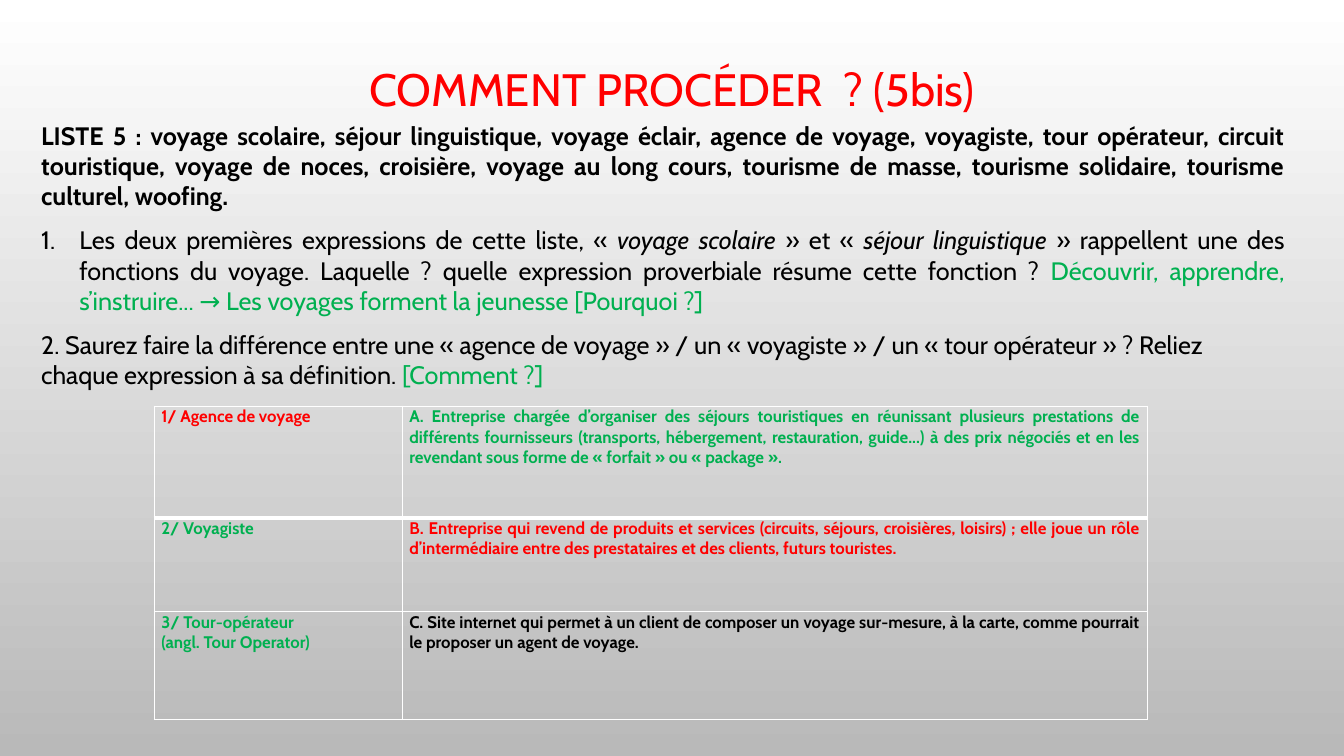
from dataclasses import dataclass

from lxml.etree import SubElement
from pptx import Presentation
from pptx.dml.color import RGBColor
from pptx.enum.text import MSO_ANCHOR as Anchor, MSO_AUTO_SIZE as AutoSize, PP_ALIGN as Align
from pptx.oxml.ns import qn
from pptx.util import Inches, Pt


@dataclass(frozen=True)
class Theme:
    """Colours, font and type sizes of the slide."""
    font: str = "Cabin"
    black: str = "000000"
    red: str = "FF0000"
    green: str = "00B050"
    white: str = "FFFFFF"
    grey: str = "B9B9B9"
    title: float = 32.4
    body: float = 18
    table: float = 12


THEME = Theme()

TITLE = "COMMENT PROCÉDER  ? (5bis)\v"
WORD_LIST = (
    "LISTE 5 : voyage scolaire, séjour linguistique, voyage éclair, agence de voyage, "
    "voyagiste, tour opérateur, circuit touristique, voyage de noces, croisière, voyage au "
    "long cours, tourisme de masse, tourisme solidaire, tourisme culturel, woofing. "
)
FIRST_QUESTION = [
    ("Les deux premières expressions de cette liste, « ", {}),
    ("voyage scolaire", {"italic": True}),
    (" » et « ", {}),
    ("séjour linguistique", {"italic": True}),
    (" » rappellent une des fonctions du voyage. Laquelle ? quelle expression "
     "proverbiale résume cette fonction ? ", {}),
    ("Découvrir, apprendre, s’instruire... → Les voyages forment la jeunesse [Pourquoi ?]",
     {"color": THEME.green}),
]
SECOND_QUESTION = [
    ("2. Saurez faire la différence entre une « agence de voyage » / un « voyagiste » / "
     "un « tour opérateur » ? Reliez chaque expression à sa définition. ", {}),
    ("[Comment ?]", {"color": THEME.green}),
]
DEFINITIONS = [
    (["1/ Agence de voyage"], THEME.red,
     "A. Entreprise chargée d’organiser des séjours touristiques en réunissant plusieurs "
     "prestations de différents fournisseurs (transports, hébergement, restauration, "
     "guide...) à des prix négociés et en les revendant sous forme de « forfait » ou "
     "« package ».", THEME.green),
    (["2/ Voyagiste"], THEME.green,
     "B. Entreprise qui revend de produits et services (circuits, séjours, croisières, "
     "loisirs) ; elle joue un rôle d’intermédiaire entre des prestataires et des clients, "
     "futurs touristes.", THEME.red),
    (["3/ Tour-opérateur ", "(angl. Tour Operator)"], THEME.green,
     "C. Site internet qui permet à un client de composer un voyage sur-mesure, à la carte, "
     "comme pourrait le proposer un agent de voyage.", THEME.black),
]
COLUMN_WIDTHS = [2.46, 7.39]
ROW_HEIGHTS = [1.11, 0.93, 1.07]


def write(paragraph, text, size=THEME.body, color=THEME.black, bold=False, italic=False):
    """Add the text to the paragraph, one run per line."""
    for index, line in enumerate(text.split("\v")):
        if index:
            paragraph.add_line_break()
        if line:
            run = paragraph.add_run()
            run.text = line
            font = run.font
            font.name, font.size = THEME.font, Pt(size)
            font.bold, font.italic = bold, italic
            font.color.rgb = RGBColor.from_string(color)


def number(paragraph, indent):
    """Give the paragraph an automatic number with a hanging indent."""
    properties = paragraph._p.get_or_add_pPr()
    properties.set("marL", str(Inches(indent)))
    properties.set("indent", str(-Inches(indent)))
    SubElement(properties, qn("a:buFont"), typeface="+mj-lt")
    SubElement(properties, qn("a:buAutoNum"), type="arabicPeriod")


def add_background(slide):
    """Fill the slide with a vertical gradient."""
    fill = slide.background.fill
    fill.gradient()
    fill.gradient_angle = 270
    for stop, color in zip(fill.gradient_stops, (THEME.white, THEME.grey)):
        stop.color.rgb = RGBColor.from_string(color)


def add_title(slide, left, top, width, height):
    """Place and format the title placeholder."""
    title = slide.shapes.title
    title.left, title.top = Inches(left), Inches(top)
    title.width, title.height = Inches(width), Inches(height)
    frame = title.text_frame
    frame.auto_size = AutoSize.NONE
    frame.vertical_anchor = Anchor.MIDDLE
    paragraph = frame.paragraphs[0]
    paragraph.alignment = Align.CENTER
    paragraph.line_spacing = 0.9
    write(paragraph, TITLE, size=THEME.title, color=THEME.red)
    paragraph.font.size = Pt(THEME.title)


def add_questions(slide, left, top, width, height):
    """Write the word list and the two questions."""
    box = slide.shapes.add_textbox(Inches(left), Inches(top), Inches(width), Inches(height))
    frame = box.text_frame
    frame.word_wrap = True
    word_list = frame.paragraphs[0]
    word_list.alignment = Align.JUSTIFY
    write(word_list, WORD_LIST, bold=True)
    for runs, alignment in ((FIRST_QUESTION, Align.JUSTIFY), (SECOND_QUESTION, Align.LEFT)):
        paragraph = frame.add_paragraph()
        if runs is FIRST_QUESTION:
            number(paragraph, 0.38)
        paragraph.alignment = alignment
        paragraph.space_before = Pt(10)
        for text, options in runs:
            write(paragraph, text, **options)


def add_borders(cell, **widths):
    """Draw white cell borders of the given widths in points."""
    properties = cell._tc.get_or_add_tcPr()
    for index, (side, width) in enumerate(widths.items()):
        line = properties.makeelement(qn(f"a:ln{side}"), {"w": str(Pt(width))})
        fill = SubElement(line, qn("a:solidFill"))
        SubElement(fill, qn("a:srgbClr"), val=THEME.white)
        properties.insert(index, line)


def fill_cell(cell, lines, color):
    """Write justified bold lines in a transparent cell."""
    cell.fill.background()
    cell.margin_left = cell.margin_right = Inches(0.07)
    cell.margin_top = cell.margin_bottom = 0
    frame = cell.text_frame
    for index, line in enumerate(lines):
        paragraph = frame.add_paragraph() if index else frame.paragraphs[0]
        paragraph.alignment = Align.JUSTIFY
        write(paragraph, line, size=THEME.table, color=color, bold=True)


def add_definitions(slide, left, top):
    """Build the table of expressions and definitions."""
    table = slide.shapes.add_table(
        len(ROW_HEIGHTS), len(COLUMN_WIDTHS), Inches(left), Inches(top),
        Inches(sum(COLUMN_WIDTHS)), Inches(sum(ROW_HEIGHTS))).table
    table.first_row = table.horz_banding = False
    for column, width in zip(table.columns, COLUMN_WIDTHS):
        column.width = Inches(width)
    for index, (label, label_color, definition, color) in enumerate(DEFINITIONS):
        row = table.rows[index]
        row.height = Inches(ROW_HEIGHTS[index])
        fill_cell(row.cells[0], label, label_color)
        fill_cell(row.cells[1], [definition], color)
        for cell in row.cells:
            add_borders(cell, L=1, R=1, T=3 if index == 1 else 1, B=3 if index == 0 else 1)


def main():
    """Build and save the presentation."""
    presentation = Presentation()
    presentation.slide_width, presentation.slide_height = Inches(13.33), Inches(7.5)
    slide = presentation.slides.add_slide(presentation.slide_layouts[5])
    add_background(slide)
    add_title(slide, 1, 0.9, 11.33, 0.56)
    add_questions(slide, 0.31, 1.14, 12.53, 5.99)
    add_definitions(slide, 1.53, 4.03)
    presentation.save("out.pptx")


if __name__ == "__main__":
    main()
